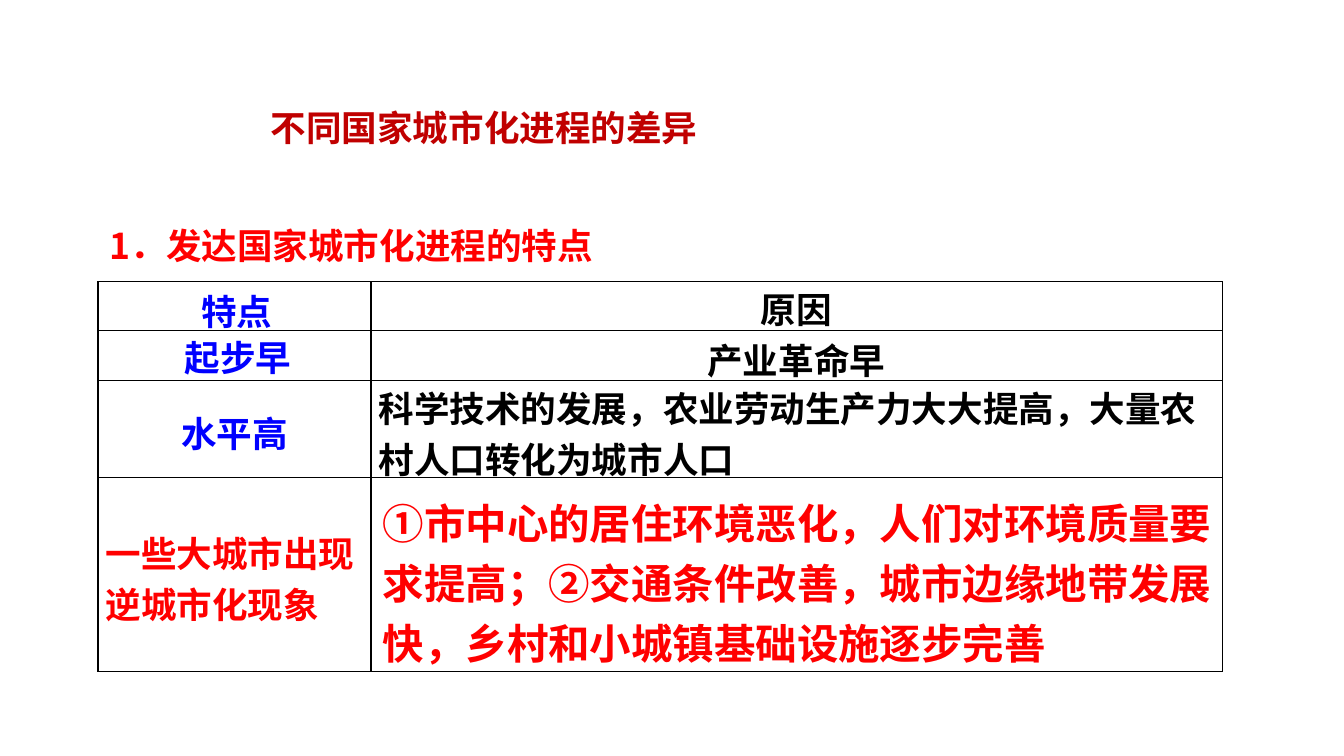
"""Build a slide on the features of urbanisation in developed countries."""
from lxml.etree import SubElement
from pptx import Presentation
from pptx.dml.color import RGBColor
from pptx.enum.shapes import MSO_CONNECTOR
from pptx.enum.text import MSO_ANCHOR, MSO_AUTO_SIZE, PP_ALIGN
from pptx.oxml.ns import qn
from pptx.util import Inches, Pt

COLORS = {"title": "C00000", "accent": "FF0000", "feature": "0000FF", "text": "000000"}
HEADING_FONT, BODY_FONT, NUMBER_FONT = "Noto Sans CJK SC", "Times New Roman", "Arial"

HEADINGS = [
    ("不同国家城市化进程的差异", "title", (2.44, 0.94, 4.22, 0.5), False),
    ("1．发达国家城市化进程的特点", "accent", (0.93, 2.05, 10.53, 0.5), True),
]

COLUMN_EDGES = [0.92, 3.48, 11.46]
ROW_EDGES = [2.64, 3.1, 3.57, 4.48, 6.3]
CELL_WIDTHS = [2.56, 7.97]
CELL_HEIGHTS = [0.45, 0.48, 0.91, 1.82]
CENTER, LEFT = PP_ALIGN.CENTER, PP_ALIGN.LEFT
ROWS = [
    [
        (["特点"], "feature", 24, CENTER, (0.02, 0.01)),
        (["原因"], "text", 24, CENTER, (0, 0)),
    ],
    [
        (["起步早"], "feature", 24, CENTER, (0.03, -0.03)),
        (["产业革命早"], "text", 24, CENTER, (0, 0)),
    ],
    [
        (["水平高"], "feature", 24, CENTER, (0, 0)),
        (["科学技术的发展，农业劳动生产力大大提高，大量农村人口转化为城市人口"],
         "text", 24, LEFT, (0, 0)),
    ],
    [
        (["一些大城市出现逆城市化现象"], "accent", 24, LEFT, (0, 0)),
        (["①", "市中心的居住环境恶化，人们对环境质量要求提高；",
          "②", "交通条件改善，城市边缘地带发展快，乡村和小城镇基础设施逐步完善"],
         "accent", 28, LEFT, (0.04, 0.03)),
    ],
]


def set_font(font, name, size, color):
    font.name = name
    font.size = Pt(size)
    font.bold = True
    font.color.rgb = RGBColor.from_string(COLORS[color])


def add_heading(slide, text, color, box, wrap):
    frame = slide.shapes.add_textbox(*map(Inches, box)).text_frame
    frame.word_wrap = wrap
    frame.auto_size = MSO_AUTO_SIZE.SHAPE_TO_FIT_TEXT
    paragraph = frame.paragraphs[0]
    paragraph.text = text
    set_font(paragraph.font, HEADING_FONT, 24, color)


def add_rule(slide, *ends):
    rule = slide.shapes.add_connector(MSO_CONNECTOR.STRAIGHT, *map(Inches, ends))
    rule.line.color.rgb = RGBColor.from_string(COLORS["text"])
    rule.line.width = Pt(1)
    SubElement(rule._element.spPr, qn("a:effectLst"))


def add_grid(slide):
    for x in COLUMN_EDGES:
        add_rule(slide, x, ROW_EDGES[0], x, ROW_EDGES[-1])
    for y in ROW_EDGES:
        add_rule(slide, COLUMN_EDGES[0], y, COLUMN_EDGES[-1], y)


def add_cell(slide, box, texts, color, size, alignment):
    frame = slide.shapes.add_textbox(*map(Inches, box)).text_frame
    frame.word_wrap = True
    frame.margin_left = frame.margin_right = Inches(0.07)
    frame.margin_top = frame.margin_bottom = 0
    frame.vertical_anchor = MSO_ANCHOR.MIDDLE
    paragraph = frame.paragraphs[0]
    paragraph.alignment = alignment
    paragraph.line_spacing = 1.2
    set_font(paragraph.font, BODY_FONT, size, color)
    for text in texts:
        run = paragraph.add_run()
        run.text = text
        if text in "①②":
            run.font.name = NUMBER_FONT


def add_cells(slide):
    for top, height, row in zip(ROW_EDGES, CELL_HEIGHTS, ROWS):
        for left, width, (*content, (shift_x, shift_y)) in zip(COLUMN_EDGES, CELL_WIDTHS, row):
            add_cell(slide, (left + shift_x, top + shift_y, width, height), *content)


def main():
    presentation = Presentation()
    presentation.slide_width, presentation.slide_height = Inches(12.6), Inches(7.09)
    slide = presentation.slides.add_slide(presentation.slide_layouts[6])
    for heading in HEADINGS:
        add_heading(slide, *heading)
    add_grid(slide)
    add_cells(slide)
    presentation.save("out.pptx")


if __name__ == "__main__":
    main()
